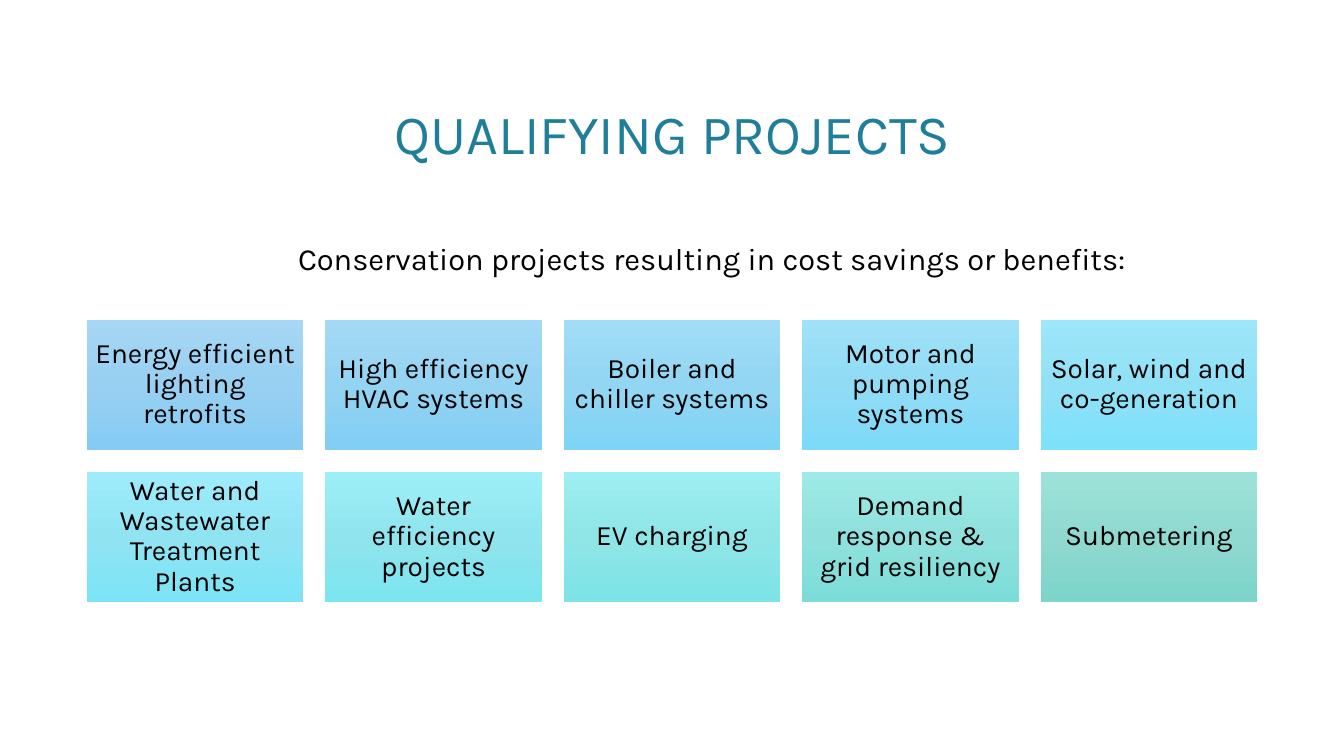
from copy import deepcopy

from pptx import Presentation
from pptx.dml.color import RGBColor
from pptx.enum.shapes import MSO_SHAPE
from pptx.enum.text import MSO_ANCHOR, MSO_AUTO_SIZE, PP_ALIGN
from pptx.oxml.ns import qn
from pptx.util import Inches, Pt

FONT = "Karla"
COLORS = {"title": "1F7F9A", "text": "000000"}
COLUMNS = 5
TILE_WIDTH, TILE_HEIGHT = 2.15, 1.29
GRID_LEFT, GRID_TOP = 0.86, 3.17
COLUMN_STEP, ROW_STEP = 2.365, 1.51

PROJECTS = [
    ("Energy efficient lighting retrofits", ("A6D7F4", "98D0F1", "85CBF3")),
    ("High efficiency HVAC systems", ("A3D9F5", "95D3F2", "81CFF4")),
    ("Boiler and chiller systems", ("A1DDF6", "93D6F3", "7ED4F6")),
    ("Motor and pumping systems", ("9FE1F7", "91DBF5", "7DDAF8")),
    ("Solar, wind and co-generation", ("9EE6F9", "91E1F6", "7CE1FB")),
    ("Water and Wastewater Treatment Plants", ("9EECFB", "90E4F2", "7CE4F6")),
    ("Water efficiency projects", ("9DEFF7", "90E4ED", "7CE5EF")),
    ("EV charging", ("9DEFF1", "90E5E7", "7CE4E6")),
    ("Demand response & grid resiliency", ("9DEAE6", "90E1DD", "7CDDD8")),
    ("Submetering", ("9DE2DA", "90D9D0", "7CD4CA")),
]


def write_text(shape, text, size, color, line_spacing=1.0):
    frame = shape.text_frame
    frame.text = text
    frame.word_wrap = True
    frame.auto_size = MSO_AUTO_SIZE.NONE
    frame.vertical_anchor = MSO_ANCHOR.MIDDLE
    para = frame.paragraphs[0]
    para.alignment = PP_ALIGN.CENTER
    para.line_spacing = line_spacing
    para.space_before = Pt(0)
    font = para.runs[0].font
    font.name = FONT
    font.size = Pt(size)
    font.color.rgb = RGBColor.from_string(COLORS[color])


def fill_gradient(shape, colors):
    shape.fill.gradient()
    shape.fill.gradient_angle = 270
    stop_list = next(shape.element.spPr.iter(qn("a:gsLst")))
    stop_list.append(deepcopy(stop_list[-1]))
    for stop, position, color in zip(shape.fill.gradient_stops, (0, 0.5, 1), colors):
        stop.position = position
        stop.color.rgb = RGBColor.from_string(color)


def add_title(page, text):
    title = page.shapes.title
    title.left, title.top = Inches(1.34), Inches(0.91)
    title.width, title.height = Inches(10.66), Inches(0.8)
    write_text(title, text, 39.6, "title")


def add_lead(page, text):
    box = page.shapes.add_textbox(Inches(1.73), Inches(2.16), Inches(10.66), Inches(0.8))
    write_text(box, text, 22, "text")


def add_tile(page, index, text, colors):
    row, column = divmod(index, COLUMNS)
    tile = page.shapes.add_shape(
        MSO_SHAPE.RECTANGLE,
        Inches(GRID_LEFT + column * COLUMN_STEP),
        Inches(GRID_TOP + row * ROW_STEP),
        Inches(TILE_WIDTH),
        Inches(TILE_HEIGHT),
    )
    tile.shadow.inherit = False
    tile.line.fill.background()
    fill_gradient(tile, colors)
    frame = tile.text_frame
    frame.margin_left = frame.margin_right = Inches(0.08)
    frame.margin_top = frame.margin_bottom = Inches(0.08)
    write_text(tile, text, 20, "text", line_spacing=0.9)


def main():
    deck = Presentation()
    deck.slide_width, deck.slide_height = Inches(13.33), Inches(7.5)
    page = deck.slides.add_slide(deck.slide_layouts[5])
    add_title(page, "QUALIFYING PROJECTS")
    add_lead(page, "Conservation projects resulting in cost savings or benefits:")
    for index, (text, colors) in enumerate(PROJECTS):
        add_tile(page, index, text, colors)
    deck.save("out.pptx")


if __name__ == "__main__":
    main()
